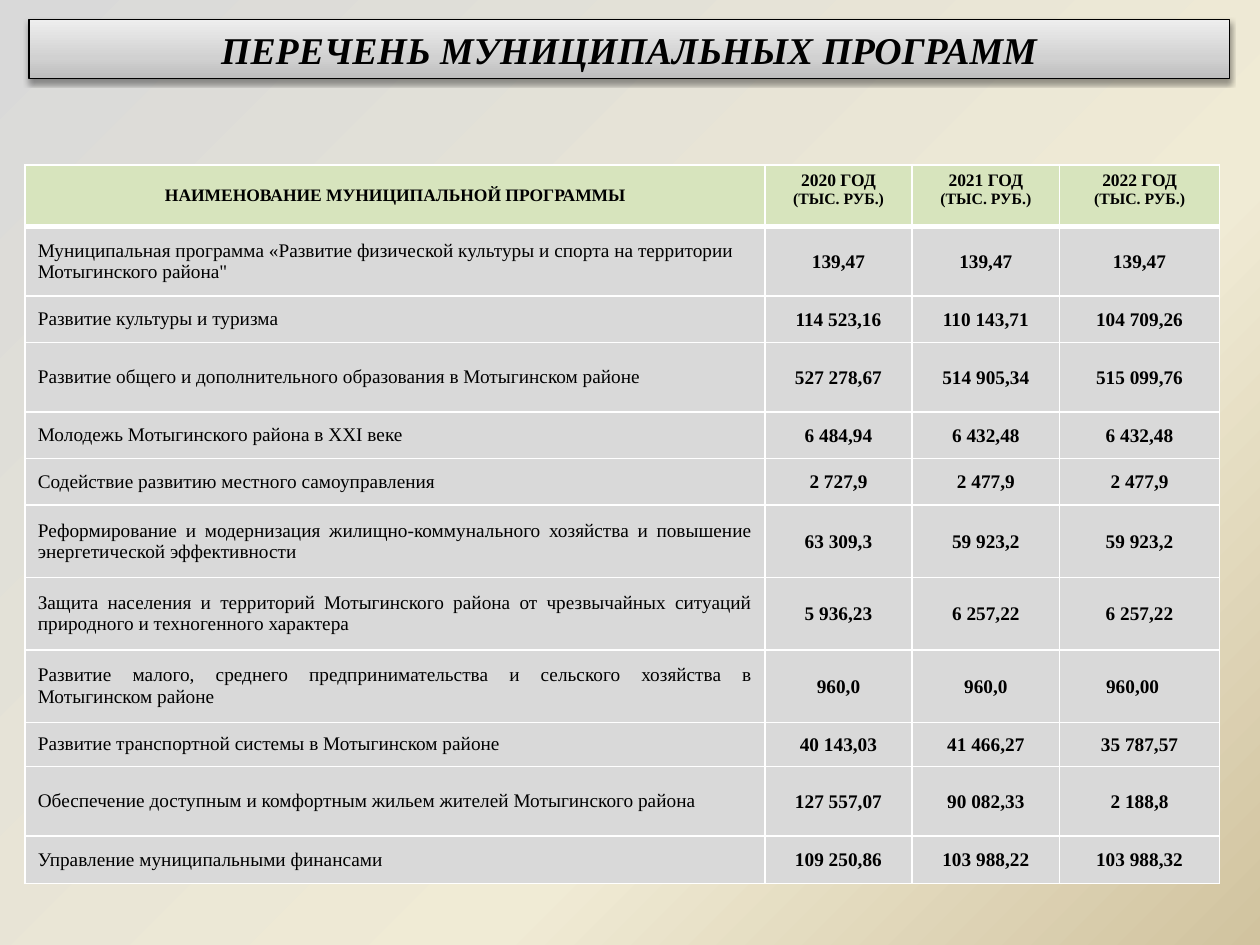
"""Build the slide that lists the municipal programmes and their yearly budgets."""
from dataclasses import dataclass

from lxml import etree
from pptx import Presentation
from pptx.dml.color import RGBColor
from pptx.enum.text import MSO_ANCHOR, MSO_AUTO_SIZE, PP_ALIGN
from pptx.oxml.ns import qn
from pptx.util import Inches, Pt

LEFT, CENTER, JUSTIFY = PP_ALIGN.LEFT, PP_ALIGN.CENTER, PP_ALIGN.JUSTIFY
TOP, MIDDLE = MSO_ANCHOR.TOP, MSO_ANCHOR.MIDDLE
NO_FIT = MSO_AUTO_SIZE.NONE
TITLE_ONLY = 5
FONT = "Times New Roman"
WIDTH, HEIGHT = Inches(10), Inches(7.5)
COLORS = {"text": "000000", "header": "D7E4BD", "body": "D9D9D9", "border": "FFFFFF"}
PAGE_STOPS = ((0, "D9D9D9"), (65, "F0EBD5"), (100, "D1C39F"))
TITLE_STOPS = ((0, "BDBDBD"), (35, "D1D1D1"), (100, "EEEEEE"))
COLUMNS = (58.7, 11.7, 11.7, 12.7)
HEADER_HEIGHT = 4.9
YEARS = (2020, 2021, 2022)
THIN, THICK = 1, 3


@dataclass(frozen=True)
class Programme:
    """A table row, with its height as a percentage of the slide's width."""
    name: str
    amounts: tuple[str, str, str]
    height: float
    align: PP_ALIGN = LEFT
    last_inset: float = 0.1


@dataclass(frozen=True)
class Line:
    """A line of cell text with its size in points."""
    text: str
    size: float
    bold: bool = True


PROGRAMMES = (
    Programme("Муниципальная программа «Развитие физической культуры и спорта на территории "
              "Мотыгинского района\"", ("139,47", "139,47", "139,47"), 5.5),
    Programme("Развитие культуры и туризма",
              ("114 523,16", "110 143,71", "104 709,26"), 3.7),
    Programme("Развитие общего и дополнительного образования в Мотыгинском районе",
              ("527 278,67", "514 905,34", "515 099,76"), 5.5),
    Programme("Молодежь Мотыгинского района в XXI веке",
              ("6 484,94", "6 432,48", "6 432,48"), 3.7),
    Programme("Содействие развитию местного самоуправления",
              ("2 727,9", "2 477,9", "2 477,9"), 3.7),
    Programme("Реформирование и модернизация жилищно-коммунального хозяйства и повышение "
              "энергетической эффективности", ("63 309,3", "59 923,2", "59 923,2"), 5.75, JUSTIFY),
    Programme("Защита населения и территорий Мотыгинского района от чрезвычайных ситуаций "
              "природного и техногенного характера",
              ("5 936,23", "6 257,22", "6 257,22"), 5.75, JUSTIFY),
    Programme("Развитие малого, среднего предпринимательства и сельского хозяйства в "
              "Мотыгинском районе", ("960,0", "960,0", "960,00"), 5.75, JUSTIFY, 1.2),
    Programme("Развитие транспортной системы в Мотыгинском районе",
              ("40 143,03", "41 466,27", "35 787,57"), 3.5),
    Programme("Обеспечение доступным и комфортным жильем жителей Мотыгинского района",
              ("127 557,07", "90 082,33", "2 188,8"), 5.5, JUSTIFY),
    Programme("Управление муниципальными финансами",
              ("109 250,86", "103 988,22", "103 988,32"), 3.8),
)


def share(percent: float) -> int:
    """Return a percentage of the slide's width as a length."""
    return round(WIDTH * percent / 100)


def add_color(parent, color: str):
    """Append an RGB colour element and return it."""
    return etree.SubElement(parent, qn("a:srgbClr"), val=color)


def set_gradient(fill, owner, stops: tuple, angle: int) -> None:
    """Give a fill a linear gradient with a counter-clockwise angle."""
    fill.gradient()
    fill.gradient_angle = angle
    stop_list = owner.find(".//" + qn("a:gsLst"))
    for old_stop in list(stop_list):
        stop_list.remove(old_stop)
    for position, color in stops:
        add_color(etree.SubElement(stop_list, qn("a:gs"), pos=str(position * 1000)), color)


def set_font(para, size: float, bold: bool, italic: bool = False) -> None:
    """Set the font of a whole paragraph."""
    font = para.font
    font.name, font.size, font.bold, font.italic = FONT, Pt(size), bold, italic
    font.color.rgb = RGBColor.from_string(COLORS["text"])


def format_title(title) -> None:
    """Write the title on its framed, shaded bar."""
    title.left, title.top, title.width, title.height = map(share, (2.3, 1.55, 95.3, 4.7))
    properties = title.element.spPr
    set_gradient(title.fill, properties, TITLE_STOPS, 90)
    title.line.color.rgb = RGBColor.from_string(COLORS["text"])
    title.line.width = Pt(0.75)
    effects = etree.SubElement(properties, qn("a:effectLst"))
    shadow = etree.SubElement(effects, qn("a:outerShdw"), blurRad=str(Pt(3.1)),
                              dist=str(Pt(1.6)), dir="5400000", rotWithShape="0")
    etree.SubElement(add_color(shadow, COLORS["text"]), qn("a:alpha"), val="38000")
    frame = title.text_frame
    frame.text = "ПЕРЕЧЕНЬ МУНИЦИПАЛЬНЫХ ПРОГРАММ"
    frame.auto_size, frame.vertical_anchor = NO_FIT, MIDDLE
    frame.paragraphs[0].alignment = CENTER
    set_font(frame.paragraphs[0], 21.6, bold=True, italic=True)


def fill_cell(cell, lines: tuple[Line, ...], align: PP_ALIGN, color: str,
              anchor: MSO_ANCHOR = MIDDLE, top: int = THIN, bottom: int = THIN) -> None:
    """Write a cell's lines and set its borders and fill."""
    frame = cell.text_frame
    frame.text = "\n".join(line.text for line in lines)
    for para, line in zip(frame.paragraphs, lines):
        para.alignment = align
        set_font(para, line.size, line.bold)
    cell.vertical_anchor = anchor
    properties = cell._tc.get_or_add_tcPr()
    for side, weight in (("L", THIN), ("R", THIN), ("T", top), ("B", bottom)):
        border = etree.SubElement(properties, qn(f"a:ln{side}"), w=str(Pt(weight)))
        add_color(etree.SubElement(border, qn("a:solidFill")), COLORS["border"])
    cell.fill.solid()
    cell.fill.fore_color.rgb = RGBColor.from_string(COLORS[color])


def add_header(table) -> None:
    """Fill the heading row."""
    table.rows[0].height = share(HEADER_HEIGHT)
    heading = Line("НАИМЕНОВАНИЕ МУНИЦИПАЛЬНОЙ ПРОГРАММЫ", 10)
    fill_cell(table.cell(0, 0), (heading,), CENTER, "header", bottom=THICK)
    for column, year in enumerate(YEARS, 1):
        lines = (Line(f"{year} ГОД", 10), Line("(ТЫС. РУБ.)", 9))
        fill_cell(table.cell(0, column), lines, CENTER, "header", TOP, bottom=THICK)


def add_programme(table, row: int, programme: Programme) -> None:
    """Fill one programme's row."""
    table.rows[row].height = share(programme.height)
    top = THICK if row == 1 else THIN
    fill_cell(table.cell(row, 0), (Line(programme.name, 11, False),), programme.align,
              "body", top=top)
    for column, amount in enumerate(programme.amounts, 1):
        cell = table.cell(row, column)
        cell.margin_left = cell.margin_right = cell.margin_top = share(0.1)
        cell.margin_bottom = 0
        fill_cell(cell, (Line(amount, 11),), CENTER, "body", top=top)
    cell.margin_right = share(programme.last_inset)


def main() -> None:
    """Build and save the deck."""
    deck = Presentation()
    deck.slide_width, deck.slide_height = WIDTH, HEIGHT
    page = deck.slides.add_slide(deck.slide_layouts[TITLE_ONLY])
    set_gradient(page.background.fill, page.element, PAGE_STOPS, 315)
    format_title(page.shapes.title)
    total = HEADER_HEIGHT + sum(programme.height for programme in PROGRAMMES)
    table = page.shapes.add_table(len(PROGRAMMES) + 1, len(COLUMNS), share(2), share(13.1),
                                  share(sum(COLUMNS)), share(total)).table
    table.horz_banding = False
    for column, width in zip(table.columns, COLUMNS):
        column.width = share(width)
    add_header(table)
    for row, programme in enumerate(PROGRAMMES, 1):
        add_programme(table, row, programme)
    deck.save("out.pptx")


if __name__ == "__main__":
    main()
